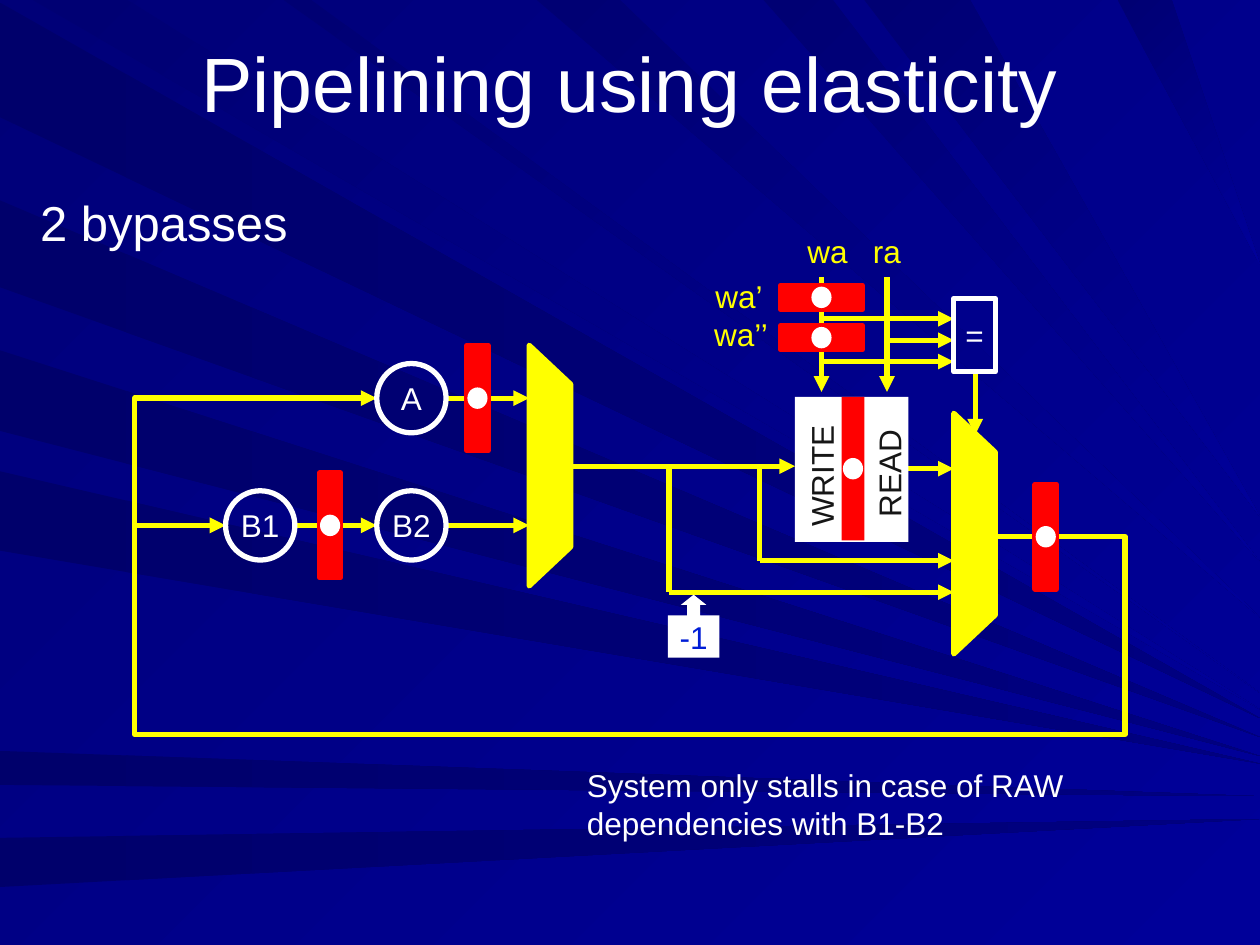
"""Build the slide on pipelining a datapath with elastic registers and two bypasses."""
from dataclasses import dataclass
from typing import Any, NamedTuple

from lxml import etree
from pptx import Presentation
from pptx.dml.color import RGBColor
from pptx.enum.shapes import MSO_CONNECTOR, MSO_SHAPE
from pptx.enum.text import MSO_ANCHOR, MSO_AUTO_SIZE, PP_ALIGN
from pptx.oxml.ns import qn
from pptx.util import Inches, Pt

STRAIGHT = MSO_CONNECTOR.STRAIGHT
RECTANGLE, OVAL, CALLOUT = MSO_SHAPE.RECTANGLE, MSO_SHAPE.OVAL, MSO_SHAPE.UP_ARROW_CALLOUT
MIDDLE, CENTER, LEFT = MSO_ANCHOR.MIDDLE, PP_ALIGN.CENTER, PP_ALIGN.LEFT
GROW, FIXED = MSO_AUTO_SIZE.SHAPE_TO_FIT_TEXT, MSO_AUTO_SIZE.NONE


@dataclass(frozen=True)
class Theme:
    font: str = "Arial"
    title: int = 44
    heading: int = 28
    body: int = 18
    stroke: int = 3
    white: str = "FFFFFF"
    wire: str = "FFFF00"
    register: str = "FF0000"
    dark: str = "161616"
    blue: str = "001DD6"
    background: tuple = ("000078", "000099", 45)
    left_ray: tuple = ("00006B", "000080", 0)
    top_ray: tuple = ("000073", "000099", 45)


class Ray(NamedTuple):
    near: float
    far: float
    tip: float


class Register(NamedTuple):
    center: tuple
    size: tuple
    outlined: bool = True


class Label(NamedTuple):
    text: str
    left: float
    top: float
    width: float
    color: str
    size: int = 18
    rotation: int = 0


THEME = Theme()
WIDTH, HEIGHT = 10, 7.5
LEFT_RAYS = [Ray(0.02, 0.93, 5.7), Ray(1.59, 2.28, 5.85), Ray(2.78, 3.42, 6),
             Ray(3.74, 4.37, 6.06), Ray(5.96, 6.23, 6.32), Ray(6.65, 7.04, 6.5)]
TOP_RAYS = [Ray(0.26, 1.01, 5.63), Ray(2.25, 2.47, 5.5), Ray(4.26, 4.92, 4.9),
            Ray(6.06, 6.61, 4.46), Ray(6.86, 7.7, 4.1), Ray(8.87, 9.3, 2.1)]
ROW_A, ROW_B, ROW_MEMORY = 3.16, 4.17, 3.7
LOOP_LEFT, LOOP_RIGHT, LOOP_TOP, LOOP_BOTTOM = 1.07, 8.93, 4.26, 5.83
UNIT_B1, UNIT_A = 1.79, 2.99
UNIT_SIZE = 0.55
FIRST_MUX, SECOND_MUX = 4.2, 7.57
MUX_WIDTH, MUX_HEIGHT, MUX_SLOPE = 0.33, 1.91, 0.31
WRITE_ADDRESS, READ_ADDRESS = 6.52, 7.04
MEMORY = (6.31, 3.15, 0.9, 1.15)
BYPASSES = [(5.31, 4.7), (6.03, 4.45)]
ARROWS_INTO = {
    UNIT_B1: [(LOOP_LEFT, ROW_B)],
    UNIT_A: [(UNIT_B1 + UNIT_SIZE, ROW_B)],
    FIRST_MUX: [(UNIT_A + UNIT_SIZE, ROW_A), (UNIT_A + UNIT_SIZE, ROW_B)],
    MEMORY[0]: [(FIRST_MUX + MUX_WIDTH, ROW_MEMORY)],
    SECOND_MUX: [(WRITE_ADDRESS, 2.53), (READ_ADDRESS, 2.7), (WRITE_ADDRESS, 2.87),
                 (MEMORY[0] + MEMORY[2], ROW_MEMORY + 0.02), *BYPASSES],
}
UPRIGHT, FLAT = (0.17, 0.83), (0.65, 0.19)
REGISTERS = [
    Register((3.79, ROW_A), UPRIGHT), Register((2.62, ROW_B), UPRIGHT), Register((8.3, LOOP_TOP), UPRIGHT),
    Register((WRITE_ADDRESS, 2.36), FLAT), Register((WRITE_ADDRESS, 2.68), FLAT),
    Register((6.77, ROW_MEMORY + 0.02), (0.18, 1.14), False),
]
LABELS = [
    Label("2 bypasses", 0.22, 1.48, 2.3, THEME.white, THEME.heading),
    Label("wa’", 5.58, 2.15, 0.62, THEME.wire),
    Label("wa’’", 5.57, 2.45, 0.68, THEME.wire),
    Label("wa", 6.31, 1.79, 0.56, THEME.wire),
    Label("ra", 6.83, 1.79, 0.45, THEME.wire),
    Label("READ", 6.56, 3.51, 0.99, THEME.dark, rotation=270),
    Label("WRITE", 5.97, 3.53, 1.1, THEME.dark, rotation=270),
    Label("System only stalls in case of RAW\vdependencies with B1-B2", 4.56, 6.03, 4.02, THEME.white),
]


def assign(target: Any, values: dict) -> None:
    for name, value in values.items():
        setattr(target, name, value)


def write(shape: Any, text: str, color: str, size: int, align: Any, frame_format: dict) -> None:
    frame = shape.text_frame
    frame.text = text
    assign(frame, frame_format)
    for para in frame.paragraphs:
        para.alignment = align
        for span in para.runs:
            assign(span.font, {"name": THEME.font, "size": Pt(size)})
            span.font.color.rgb = RGBColor.from_string(color)


def paint(fill: Any, start: str, end: str = "", angle: int = 0) -> None:
    if not start:
        fill.background()
    elif end:
        fill.gradient()
        fill.gradient_angle = -angle % 360
        for stop, color in zip(fill.gradient_stops, (start, end)):
            stop.color.rgb = RGBColor.from_string(color)
    else:
        fill.solid()
        fill.fore_color.rgb = RGBColor.from_string(start)


def stroke(shape: Any, color: str, arrow: bool = False) -> None:
    paint(shape.line.fill, color)
    if color:
        shape.line.width = Pt(THEME.stroke)
    if arrow:
        outline = shape._element.spPr.find(qn("a:ln"))
        etree.SubElement(outline, qn("a:tailEnd"), type="triangle")


def add_block(page: Any, kind: Any, at: tuple, fill: str = "", line: str = "") -> Any:
    shape = page.shapes.add_shape(kind, *map(Inches, at))
    shape.shadow.inherit = False
    paint(shape.fill, fill)
    stroke(shape, line)
    return shape


def add_outline(page: Any, points: tuple, fill: tuple, line: str = "", closed: bool = True) -> None:
    first, *rest = [tuple(map(Inches, point)) for point in points]
    builder = page.shapes.build_freeform(*first)
    builder.add_line_segments(rest, close=closed)
    shape = builder.convert_to_shape()
    shape.shadow.inherit = False
    paint(shape.fill, *fill)
    stroke(shape, line, arrow=not closed)


def add_wire(page: Any, begin: tuple, finish: tuple, arrow: bool = True) -> None:
    line = page.shapes.add_connector(STRAIGHT, *map(Inches, begin + finish))
    stroke(line, THEME.wire, arrow)
    etree.SubElement(line._element.spPr, qn("a:effectLst"))


def add_register(page: Any, register: Register) -> None:
    outline = THEME.register if register.outlined else ""
    parts = ((RECTANGLE, register.size, THEME.register, outline), (OVAL, (0.16, 0.17), THEME.white, ""))
    for kind, size, fill, line in parts:
        corner = tuple(middle - length / 2 for middle, length in zip(register.center, size))
        add_block(page, kind, corner + size, fill, line)


def add_label(page: Any, label: Label) -> None:
    lines = label.text.count("\v") + 1
    height = 0.1 + lines * label.size / 60
    box = page.shapes.add_textbox(*map(Inches, (label.left, label.top, label.width, height)))
    box.rotation = label.rotation
    write(box, label.text, label.color, label.size, LEFT, {"word_wrap": False, "auto_size": GROW})


def add_multiplexer(page: Any, left: float, top: float) -> None:
    right, bottom = left + MUX_WIDTH, top + MUX_HEIGHT
    points = ((left, bottom), (right, bottom - MUX_SLOPE), (right, top + MUX_SLOPE), (left, top))
    add_outline(page, points, (THEME.wire,), THEME.wire)


def main() -> None:
    deck = Presentation()
    assign(deck, {"slide_width": Inches(WIDTH), "slide_height": Inches(HEIGHT)})
    page = deck.slides.add_slide(deck.slide_layouts[5])
    paint(page.background.fill, *THEME.background)
    for ray in LEFT_RAYS:
        add_outline(page, ((0, ray.near), (0, ray.far), (WIDTH, ray.tip)), THEME.left_ray)
    for ray in TOP_RAYS:
        add_outline(page, ((ray.near, 0), (ray.far, 0), (WIDTH, ray.tip)), THEME.top_ray)
    title = page.shapes.title
    page.shapes._spTree.append(title._element)
    assign(title, dict(zip(("left", "top", "width", "height"), map(Inches, (0.5, 0.02, 9, 1.25)))))
    write(title, "Pipelining using elasticity", THEME.white, THEME.title, CENTER,
          {"vertical_anchor": MIDDLE, "word_wrap": True, "auto_size": FIXED})
    for target, sources in ARROWS_INTO.items():
        for x, y in sources:
            add_wire(page, (x, y), (target, y))
    for x, y in BYPASSES:
        add_wire(page, (x, ROW_MEMORY), (x, y), arrow=False)
    for x in (WRITE_ADDRESS, READ_ADDRESS):
        add_wire(page, (x, 2.2), (x, 3.11))
    add_wire(page, (7.74, 2.95), (7.74, 3.45))
    loop = ((SECOND_MUX + MUX_WIDTH, LOOP_TOP), (LOOP_RIGHT, LOOP_TOP), (LOOP_RIGHT, LOOP_BOTTOM),
            (LOOP_LEFT, LOOP_BOTTOM), (LOOP_LEFT, ROW_A), (UNIT_A, ROW_A))
    add_outline(page, loop, ("",), THEME.wire, closed=False)
    add_multiplexer(page, FIRST_MUX, 2.74)
    add_multiplexer(page, SECOND_MUX, 3.28)
    centered = {"vertical_anchor": MIDDLE, "word_wrap": False}
    for name, left, row in (("A", UNIT_A, ROW_A), ("B2", UNIT_A, ROW_B), ("B1", UNIT_B1, ROW_B)):
        unit = add_block(page, OVAL, (left, row - UNIT_SIZE / 2, UNIT_SIZE, UNIT_SIZE), line=THEME.white)
        write(unit, name, THEME.white, THEME.body, CENTER, centered)
    comparator = add_block(page, RECTANGLE, (SECOND_MUX, 2.37, MUX_WIDTH, 0.58), line=THEME.white)
    write(comparator, "=", THEME.white, THEME.body, CENTER, centered)
    add_block(page, RECTANGLE, MEMORY, THEME.white)
    for register in REGISTERS:
        add_register(page, register)
    offset = add_block(page, CALLOUT, (5.3, 4.72, 0.41, 0.5), THEME.white)
    for index, value in enumerate((0.25, 0.25, 0.2, 0.67)):
        offset.adjustments[index] = value
    write(offset, "-1", THEME.blue, THEME.body, CENTER, centered)
    for label in LABELS:
        add_label(page, label)
    deck.save("out.pptx")


if __name__ == "__main__":
    main()
